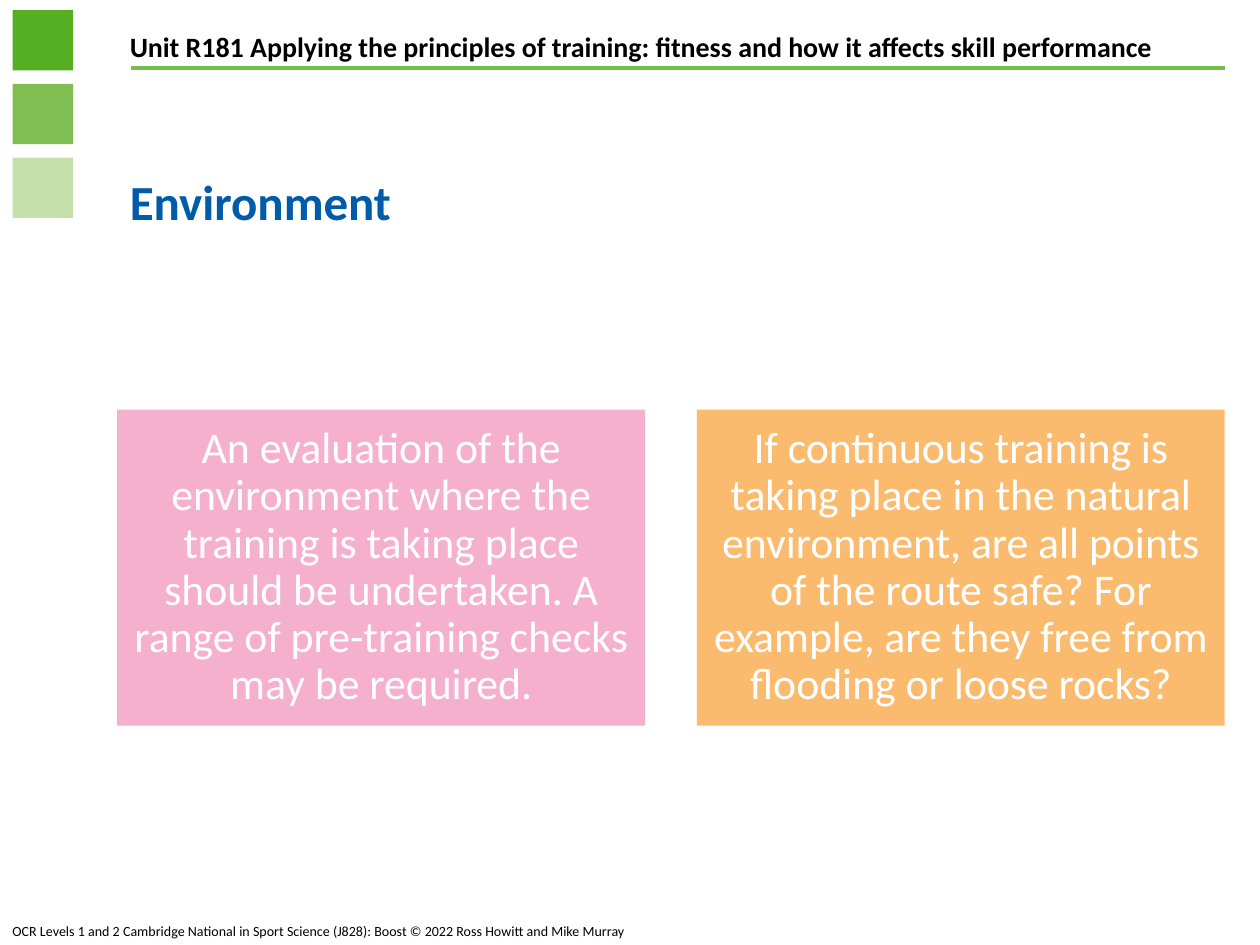
from dataclasses import dataclass

from lxml.etree import SubElement
from pptx import Presentation
from pptx.dml.color import RGBColor
from pptx.enum.shapes import MSO_CONNECTOR, MSO_SHAPE
from pptx.enum.text import MSO_ANCHOR, MSO_AUTO_SIZE, PP_ALIGN
from pptx.oxml.ns import qn
from pptx.shapes.autoshape import Shape
from pptx.slide import Slide
from pptx.util import Inches, Pt

COLORS = {
    "black": "000000",
    "white": "FFFFFF",
    "title": "005BA8",
    "rule": "76BE4C",
    "dark_green": "56AF23",
    "mid_green": "81BE52",
    "pale_green": "C5E0AB",
    "pink": "F5B0CE",
    "orange": "FABB6F",
}


@dataclass(frozen=True)
class Box:
    left: float
    top: float
    width: float
    height: float

    def lengths(self) -> list[int]:
        return [Inches(value) for value in (self.left, self.top, self.width, self.height)]


@dataclass(frozen=True)
class TextStyle:
    size: float
    color: str
    bold: bool = False
    alignment: PP_ALIGN = PP_ALIGN.LEFT
    anchor: MSO_ANCHOR = MSO_ANCHOR.TOP
    line_spacing: float = 1.0
    left_inset: float = 0.1
    vertical_inset: float = 0.05


@dataclass(frozen=True)
class Card:
    text: str
    color: str


HEADER_STYLE = TextStyle(16, "black", bold=True, anchor=MSO_ANCHOR.MIDDLE, left_inset=0.2)
TITLE_STYLE = TextStyle(28, "title", bold=True, anchor=MSO_ANCHOR.BOTTOM)
FOOTER_STYLE = TextStyle(8, "black")
CARD_STYLE = TextStyle(25, "white", alignment=PP_ALIGN.CENTER, anchor=MSO_ANCHOR.MIDDLE,
                       line_spacing=0.9, vertical_inset=0.1)

CARDS = [
    Card("An evaluation of the environment where the training is taking place should be "
         "undertaken. A range of pre-training checks may be required.", "pink"),
    Card("If continuous training is taking place in the natural environment, are all points "
         "of the route safe? For example, are they free from flooding or loose rocks?", "orange"),
]


def set_attributes(target: object, values: dict) -> None:
    for name, value in values.items():
        setattr(target, name, value)


def write_text(shape: Shape, text: str, style: TextStyle) -> None:
    frame = shape.text_frame
    set_attributes(frame, {
        "word_wrap": True,
        "auto_size": MSO_AUTO_SIZE.NONE,
        "vertical_anchor": style.anchor,
        "margin_left": Inches(style.left_inset),
        "margin_right": Inches(0.1),
        "margin_top": Inches(style.vertical_inset),
        "margin_bottom": Inches(style.vertical_inset),
    })
    paragraph = frame.paragraphs[0]
    set_attributes(paragraph, {
        "alignment": style.alignment,
        "line_spacing": style.line_spacing,
    })
    run = paragraph.add_run()
    run.text = text
    set_attributes(run.font, {"name": "Calibri", "size": Pt(style.size), "bold": style.bold})
    run.font.color.rgb = RGBColor.from_string(COLORS[style.color])


def add_text(slide: Slide, box: Box, text: str, style: TextStyle) -> None:
    write_text(slide.shapes.add_textbox(*box.lengths()), text, style)


def add_block(slide: Slide, box: Box, color: str) -> Shape:
    shape = slide.shapes.add_shape(MSO_SHAPE.RECTANGLE, *box.lengths())
    shape.shadow.inherit = False
    shape.fill.solid()
    shape.fill.fore_color.rgb = RGBColor.from_string(COLORS[color])
    shape.line.fill.background()
    return shape


def add_rule(slide: Slide, left: float, right: float, top: float) -> None:
    rule = slide.shapes.add_connector(
        MSO_CONNECTOR.STRAIGHT, Inches(left), Inches(top), Inches(right), Inches(top))
    rule.line.color.rgb = RGBColor.from_string(COLORS["rule"])
    rule.line.width = Pt(2.25)
    SubElement(rule._element.spPr, qn("a:effectLst"))


def place_title(slide: Slide, box: Box, text: str) -> None:
    title = slide.shapes.title
    set_attributes(title, dict(zip(("left", "top", "width", "height"), box.lengths())))
    write_text(title, text, TITLE_STYLE)


def main() -> None:
    presentation = Presentation()
    set_attributes(presentation, {"slide_width": Inches(10), "slide_height": Inches(7.5)})
    slide = presentation.slides.add_slide(presentation.slide_layouts[5])

    add_text(slide, Box(0, 7.27, 6.58, 0.23),
             "OCR Levels 1 and 2 Cambridge National in Sport Science (J828): "
             "Boost © 2022 Ross Howitt and Mike Murray", FOOTER_STYLE)
    add_text(slide, Box(0.83, 0.14, 8.98, 0.46),
             "Unit R181 Applying the principles of training: "
             "fitness and how it affects skill performance", HEADER_STYLE)
    add_rule(slide, 1.04, 9.72, 0.54)

    for index, color in enumerate(("dark_green", "mid_green", "pale_green")):
        add_block(slide, Box(0.1, 0.08 + index * 0.585, 0.48, 0.48), color)

    place_title(slide, Box(0.93, 0.51, 8.8, 1.37), "Environment")

    for index, card in enumerate(CARDS):
        block = add_block(slide, Box(0.93 + index * 4.6, 3.25, 4.19, 2.51), card.color)
        write_text(block, card.text, CARD_STYLE)

    presentation.save("out.pptx")


if __name__ == "__main__":
    main()
